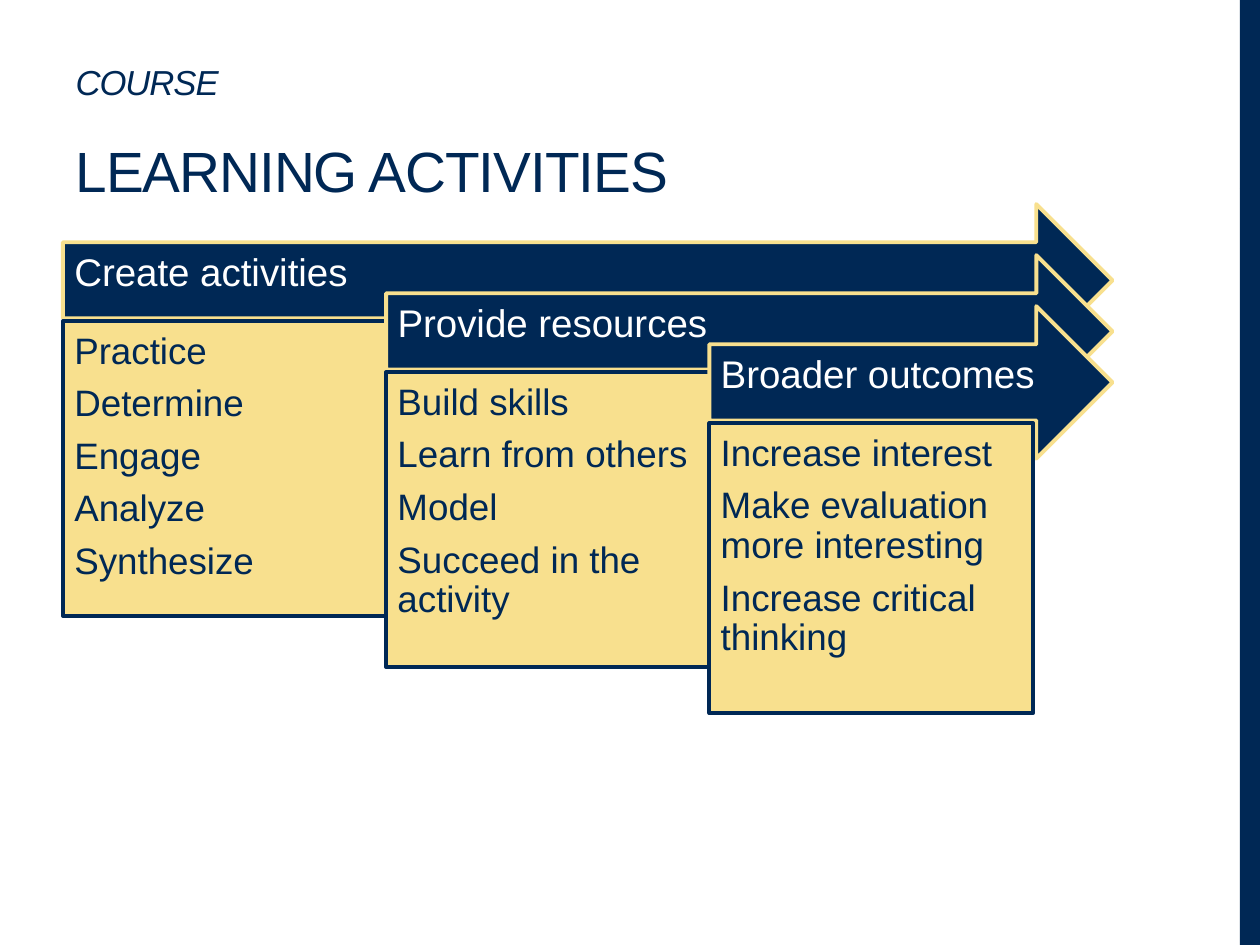
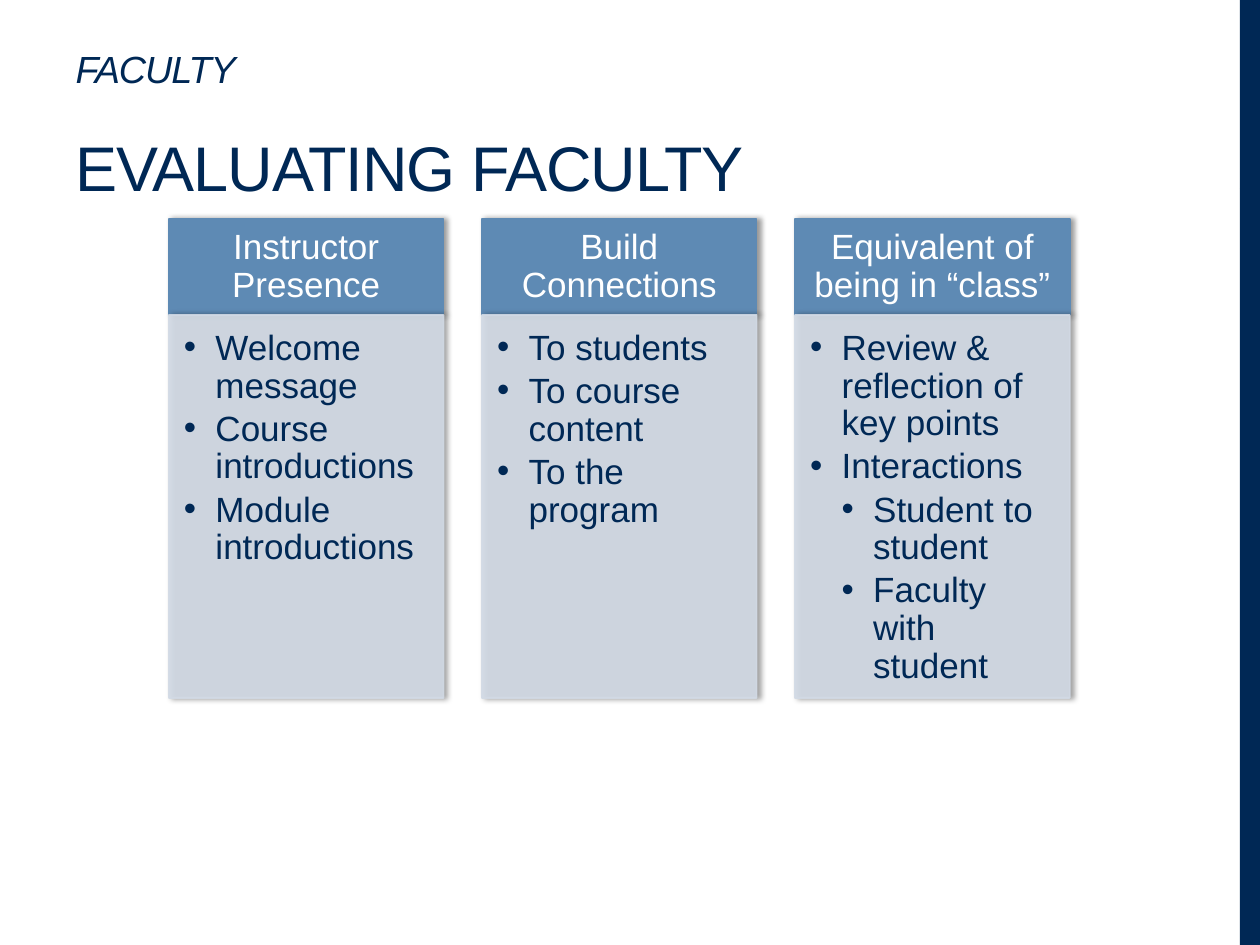
from lxml.etree import SubElement
from pptx import Presentation
from pptx.dml.color import RGBColor
from pptx.enum.shapes import MSO_SHAPE as SHAPE
from pptx.enum.text import MSO_ANCHOR as ANCHOR, MSO_AUTO_SIZE as AUTO_SIZE, PP_ALIGN as ALIGN
from pptx.oxml.ns import qn
from pptx.util import Inches, Pt

FONT = "Arial"
COLORS = {
    "navy": "002855",
    "gold": "F8E08E",
    "blue": "5E8AB4",
    "mist": "D2DAE5",
    "white": "FFFFFF",
    "shadow": "000000",
}

ACTIVITIES = {
    "kicker": "COURSE", "title": "LEARNING ACTIVITIES",
    "sizes": (19.8, 32.4), "title_width": 8.33,
    "stages": [
        ("Create activities", 2.34,
         ["Practice", "Determine", "Engage", "Analyze", "Synthesize"]),
        ("Provide resources", 2.34,
         ["Build skills", "Learn from others", "Model", "Succeed in the activity"]),
        ("Broader outcomes", 2.3,
         ["Increase interest", "Make evaluation more interesting",
          "Increase critical thinking"]),
    ],
}

# Each point is (level, wording).
FACULTY = {
    "kicker": "FACULTY", "title": "EVALUATING FACULTY",
    "sizes": (21.6, 36), "title_width": 6.33,
    "columns": [
        ("Instructor Presence",
         [(1, "Welcome message"), (1, "Course introductions"), (1, "Module introductions")]),
        ("Build Connections",
         [(1, "To students"), (1, "To course content"), (1, "To the program")]),
        ("Equivalent of being in “class”",
         [(1, "Review & reflection of key points"), (1, "Interactions"),
          (2, "Student to student"), (2, "Faculty with student")]),
    ],
}

EDGE_BANDS = [(0, 1.5), (1.5, 6)]  # top, height


def rgb(name):
    return RGBColor.from_string(COLORS[name])


def spread(first, last, count):
    """Return count evenly spaced positions from first to last."""
    return [first + i * (last - first) / (count - 1) for i in range(count)]


def add_block(slide, preset, box, fill, line=None, line_width=1):
    block = slide.shapes.add_shape(preset, *map(Inches, box))
    block.shadow.inherit = False
    block.fill.solid()
    block.fill.fore_color.rgb = rgb(fill)
    if line:
        block.line.color.rgb = rgb(line)
        block.line.width = Pt(line_width)
    else:
        block.line.fill.background()
    return block


def set_opacity(block, percent):
    for color in block._element.spPr.iter(qn("a:srgbClr")):
        SubElement(color, qn("a:alpha"), val=str(percent * 1000))


def add_side_shadow(block):
    effects = block._element.spPr.find(qn("a:effectLst"))
    shadow = SubElement(effects, qn("a:outerShdw"), blurRad=str(Pt(3.1)),
                        dist=str(Pt(1.8)), dir="0", rotWithShape="0")
    color = SubElement(shadow, qn("a:srgbClr"), val=COLORS["shadow"])
    SubElement(color, qn("a:alpha"), val="40000")


def write(block, points, size, color, insets, anchor=ANCHOR.TOP, align=ALIGN.LEFT, gap=0.35):
    """Fill a block with (level, wording) points; level 0 has no bullet."""
    frame = block.text_frame
    frame.word_wrap = True
    frame.vertical_anchor = anchor
    (frame.margin_left, frame.margin_top,
     frame.margin_right, frame.margin_bottom) = map(Inches, insets)
    frame.text = "\n".join(wording for _, wording in points)
    for paragraph, (level, _) in zip(frame.paragraphs, points):
        if level:
            props = paragraph._p.get_or_add_pPr()
            props.set("marL", str(Inches(0.25 * level)))
            props.set("indent", str(Inches(-0.25)))
            SubElement(props, qn("a:buFont"), typeface=FONT)
            SubElement(props, qn("a:buChar"), char="•")
            paragraph.level = level
        paragraph.alignment = align
        paragraph.line_spacing = 0.9
        paragraph.space_after = Pt(gap * size)
        for run in paragraph.runs:
            run.font.name = FONT
            run.font.size = Pt(size)
            run.font.color.rgb = rgb(color)


def start_slide(deck, content):
    """Add a slide with the edge bands and the two-line title."""
    slide = deck.slides.add_slide(deck.slide_layouts[5])
    for top, height in EDGE_BANDS:
        add_block(slide, SHAPE.RECTANGLE, (9.84, top, 0.16, height), "navy")

    title = slide.shapes.title
    title.left, title.top = Inches(0.5), Inches(0.17)
    title.width, title.height = Inches(content["title_width"]), Inches(1.5)
    frame = title.text_frame
    frame.auto_size = AUTO_SIZE.NONE
    frame.word_wrap = True
    frame.vertical_anchor = ANCHOR.BOTTOM
    frame.text = content["kicker"] + "\v" + content["title"]
    heading = frame.paragraphs[0]
    heading.alignment = ALIGN.LEFT
    heading.line_spacing = 1.5
    for run, size, italic in zip(heading.runs, content["sizes"], (True, False)):
        run.font.name = FONT
        run.font.size = Pt(size)
        run.font.italic = italic
        run.font.color.rgb = rgb("navy")
        run._r.get_or_add_rPr().set("spc", "-60")
    line_break = heading._p.find(qn("a:br"))
    SubElement(line_break, qn("a:rPr"), sz=str(round(content["sizes"][0] * 100)))
    return slide


def build_activities(deck):
    slide = start_slide(deck, ACTIVITIES)
    stages = ACTIVITIES["stages"]
    arrow_tip, arrow_height, panel_drop = 8.83, 1.21, 0.93
    lefts = spread(0.5, 5.63, len(stages))
    tops = spread(1.62, 2.43, len(stages))
    for (name, panel_height, points), left, top in zip(stages, lefts, tops):
        arrow = add_block(slide, SHAPE.RIGHT_ARROW,
                          (left, top, arrow_tip - left, arrow_height), "navy", "gold", 2.25)
        write(arrow, [(0, name)], 22, "white", (0.09, 0.09, 0.28, 0.19), ANCHOR.MIDDLE)
        panel = add_block(slide, SHAPE.RECTANGLE,
                          (left, top + panel_drop, 2.57, panel_height), "gold", "navy", 2.25)
        write(panel, [(0, point) for point in points], 21, "navy", (0.09,) * 4)


def build_faculty(deck):
    slide = start_slide(deck, FACULTY)
    columns = FACULTY["columns"]
    top, width, header_height, body_height = 1.74, 2.18, 0.76, 3.04
    for (name, points), left in zip(columns, spread(1.34, 6.31, len(columns))):
        header = add_block(slide, SHAPE.RECTANGLE,
                           (left, top, width, header_height), "blue", "blue")
        add_side_shadow(header)
        write(header, [(0, name)], 20, "white", (0.12, 0.09, 0.12, 0.09),
              ANCHOR.MIDDLE, ALIGN.CENTER)
        body = add_block(slide, SHAPE.RECTANGLE,
                         (left, top + header_height, width, body_height), "mist", "mist")
        set_opacity(body, 90)
        add_side_shadow(body)
        write(body, points, 20, "navy", (0.12, 0.12, 0.16, 0.17), gap=0.15)


def main():
    deck = Presentation()
    deck.slide_width, deck.slide_height = Inches(10), Inches(7.5)
    build_activities(deck)
    build_faculty(deck)
    deck.save("out.pptx")


if __name__ == "__main__":
    main()
